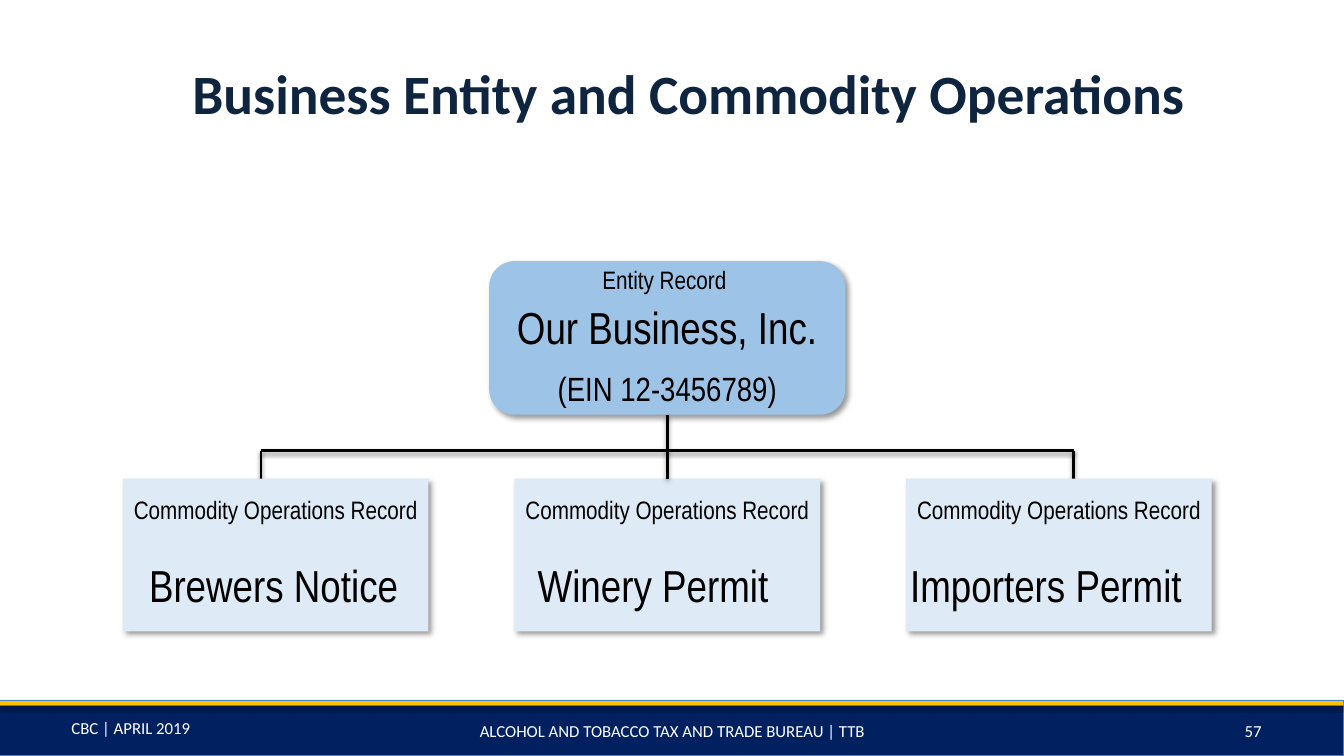
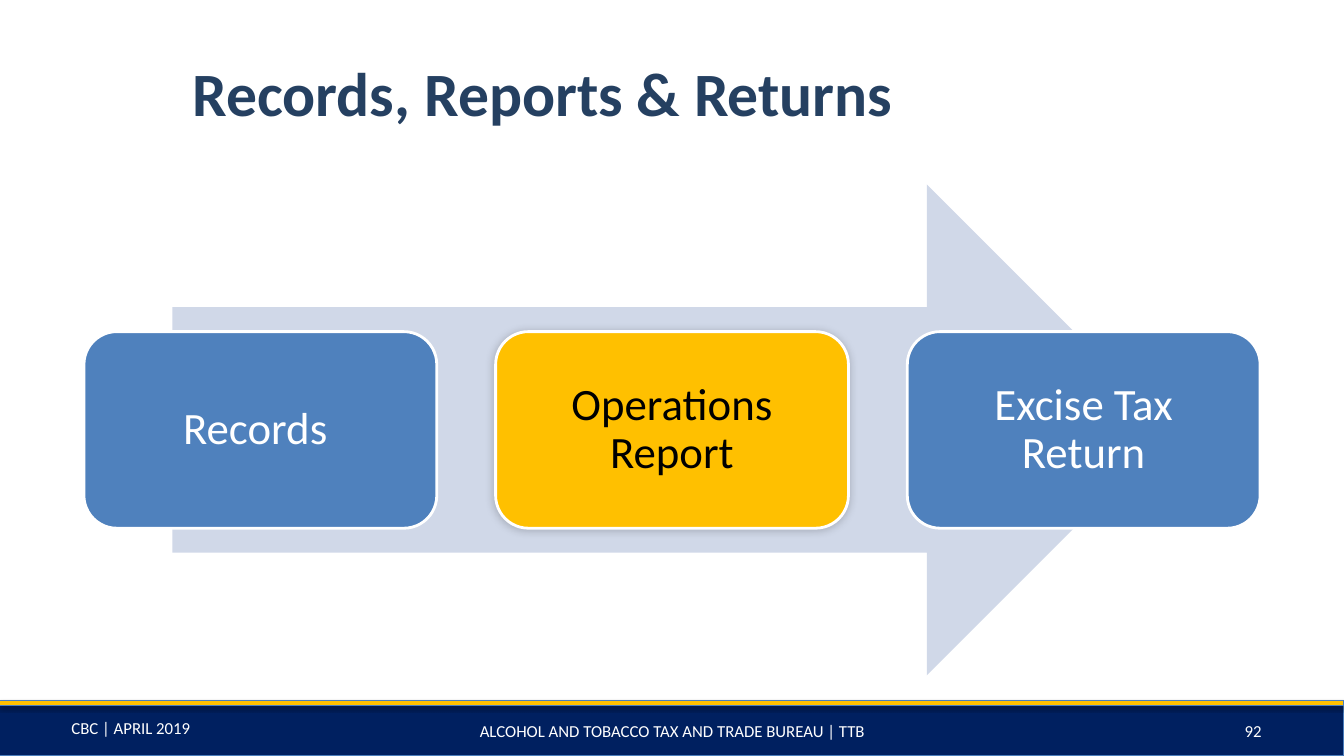
"""Build two slides on business records: an entity chart and a reporting process."""
from dataclasses import dataclass
from typing import Any, Optional

from lxml.etree import SubElement
from pptx import Presentation
from pptx.dml.color import RGBColor
from pptx.enum.shapes import MSO_CONNECTOR, MSO_SHAPE as SHAPE
from pptx.enum.text import MSO_ANCHOR as ANCHOR, PP_ALIGN as ALIGN
from pptx.oxml.ns import qn
from pptx.util import Inches, Pt

W, H = Inches(13.33), Inches(7.5)
NAVY, GOLD, EDGE = "002060", "FFC000", "4B7EBC"
WHITE, BLACK = "FFFFFF", "000000"
ENTITY_BLUE, CARD_BLUE = "9DC3E6", "DEEBF7"
STEP_BLUE, ARROW_BLUE = "4F81BD", "D0D8E8"
SANS, NARROW = "Calibri", "Arial Narrow"


@dataclass(frozen=True)
class Box:
    """Place and size in percent of the slide."""
    x: float
    y: float
    w: float
    h: float

    def emu(self) -> tuple[int, int, int, int]:
        return px(self.x), py(self.y), px(self.w), py(self.h)


@dataclass(frozen=True)
class Shadow:
    """Outer shadow: opacity in percent, blur and distance in points, angle."""
    alpha: int
    blur: float
    dist: float
    angle: int


@dataclass(frozen=True)
class Para:
    """One paragraph of one run, with an optional left indent in inches."""
    text: str
    size: float
    color: str = BLACK
    font: str = NARROW
    bold: bool = False
    align: Any = ALIGN.CENTER
    before: float = 0
    spacing: float = 1
    indent: float = 0


@dataclass(frozen=True)
class Permit:
    """Name of a commodity record and its left indent."""
    name: str
    indent: float


@dataclass(frozen=True)
class Step:
    """One stage of the reporting process."""
    text: str
    fill: str = STEP_BLUE
    color: str = WHITE
    shadow: Optional[Shadow] = None


BAND_SHADOW = Shadow(35, 3.1, 1.8, 90)
LINE_SHADOW = Shadow(38, 3.1, 1.6, 90)
CARD_SHADOW = Shadow(40, 4, 3, 45)
STEP_SHADOW = Shadow(20, 6, 1, 135)

TITLE = Box(13.58, 6.67, 81.47, 11.07)
BANDS = ((Box(0, 92.67, 100, 7.33), NAVY), (Box(0, 92.67, 100, 0.67), GOLD))
DATE = Box(0, 94.27, 19.2, 4)
AGENCY = Box(26.71, 94, 46.66, 5.33)
NUMBER = Box(86.57, 94, 13.35, 5.33)

CENTRE = 49.65
ENTITY = Box(CENTRE - 13.25, 34.53, 26.5, 20.33)
CARD_W, CARD_H, CARD_Y, CARD_PITCH = 22.74, 20.2, 63.33, 29.14
BUS_Y, BUS_HALF, DROP_END = 59.6, 30.23, 64
PERMITS = (Permit("Brewers Notice", 0.25), Permit("Winery Permit", 0.22),
           Permit("Importers Permit", 0.03))

ARROW = Box(12.83, 24.4, 74.4, 64.93)
STEP, STEP_PITCH = Box(6.25, 43.87, 26.25, 26), 30.63
STEPS = (Step("Records "), Step("Operations Report", GOLD, BLACK, STEP_SHADOW),
         Step("Excise Tax Return"))


def px(share: float) -> int:
    return round(W * share / 100)


def py(share: float) -> int:
    return round(H * share / 100)


def rgb(color: str) -> RGBColor:
    return RGBColor.from_string(color)


def set_shadow(sp: Any, shadow: Optional[Shadow]) -> None:
    effects = SubElement(sp._element.spPr, qn("a:effectLst"))
    if shadow:
        outer = SubElement(effects, qn("a:outerShdw"), blurRad=str(Pt(shadow.blur)),
                           dist=str(Pt(shadow.dist)), dir=str(shadow.angle * 60000),
                           algn="ctr", rotWithShape="0")
        clr = SubElement(outer, qn("a:srgbClr"), val=BLACK)
        SubElement(clr, qn("a:alpha"), val=str(shadow.alpha * 1000))


def write(sp: Any, paras: list[Para], inset: Optional[float] = None,
          anchor: Any = ANCHOR.MIDDLE) -> None:
    tf = sp.text_frame
    tf.word_wrap = True
    tf.vertical_anchor = anchor
    if inset is not None:
        tf.margin_left = tf.margin_right = tf.margin_top = tf.margin_bottom = Inches(inset)
    for i, para in enumerate(paras):
        p = tf.add_paragraph() if i else tf.paragraphs[0]
        p.alignment, p.line_spacing = para.align, para.spacing
        if para.before:
            p.space_before = Pt(para.before)
        if para.indent:
            p._p.get_or_add_pPr().set("marL", str(Inches(para.indent)))
        r = p.add_run()
        r.text = para.text
        r.font.name, r.font.size, r.font.bold = para.font, Pt(para.size), para.bold
        r.font.color.rgb = rgb(para.color)


def add_shape(s: Any, kind: Any, box: Box, fill: str, line: Optional[str] = None,
              width: float = 0.75, shadow: Optional[Shadow] = None) -> Any:
    sp = s.shapes.add_shape(kind, *box.emu())
    sp.fill.solid()
    sp.fill.fore_color.rgb = rgb(fill)
    if line:
        sp.line.color.rgb = rgb(line)
        sp.line.width = Pt(width)
    else:
        sp.line.fill.background()
    set_shadow(sp, shadow)
    return sp


def add_text(s: Any, box: Box, para: Para, anchor: Any = ANCHOR.MIDDLE) -> None:
    write(s.shapes.add_textbox(*box.emu()), [para], anchor=anchor)


def add_line(s: Any, x1: float, y1: float, x2: float, y2: float) -> None:
    cn = s.shapes.add_connector(MSO_CONNECTOR.STRAIGHT, px(x1), py(y1), px(x2), py(y2))
    cn.line.color.rgb = rgb(BLACK)
    cn.line.width = Pt(2)
    set_shadow(cn, LINE_SHADOW)


def add_slide(prs: Any, title: str, size: float, color: str, number: int) -> Any:
    s = prs.slides.add_slide(prs.slide_layouts[6])
    for box, fill in BANDS:
        add_shape(s, SHAPE.RECTANGLE, box, fill, EDGE, shadow=BAND_SHADOW)
    add_text(s, DATE, Para(" CBC | APRIL 2019", 12, WHITE, SANS), ANCHOR.TOP)
    add_text(s, AGENCY, Para("ALCOHOL AND TOBACCO TAX AND TRADE BUREAU | TTB", 12, WHITE, SANS))
    add_text(s, NUMBER, Para(str(number), 12, WHITE, SANS))
    add_text(s, TITLE, Para(title, size, color, SANS, True, ALIGN.LEFT))
    return s


def build_entity_chart(prs: Any) -> None:
    s = add_slide(prs, "Business Entity and Commodity Operations", 39.6, "0F243E", 57)
    left, right = CENTRE - BUS_HALF, CENTRE + BUS_HALF
    for x in (left, right):
        add_line(s, x, BUS_Y, x, DROP_END)
    sp = add_shape(s, SHAPE.ROUNDED_RECTANGLE, ENTITY, ENTITY_BLUE, shadow=CARD_SHADOW)
    write(sp, [Para("Entity Record ", 18, spacing=0.9),
               Para("Our Business, Inc.", 32, before=8, spacing=0.9),
               Para("(EIN 12-3456789)", 24, before=13, spacing=0.9)], 0.05)
    for i, permit in enumerate(PERMITS):
        x = CENTRE - CARD_W / 2 + (i - 1) * CARD_PITCH
        sp = add_shape(s, SHAPE.RECTANGLE, Box(x, CARD_Y, CARD_W, CARD_H), CARD_BLUE,
                       shadow=CARD_SHADOW)
        write(sp, [Para("Commodity Operations Record", 18, spacing=0.9),
                   Para(permit.name, 32, align=ALIGN.LEFT, before=28, spacing=0.9,
                        indent=permit.indent)], 0.01)
    add_line(s, CENTRE, ENTITY.y + ENTITY.h, CENTRE, CARD_Y)
    add_line(s, left, BUS_Y, right, BUS_Y)


def build_process(prs: Any) -> None:
    s = add_slide(prs, "Records, Reports & Returns", 44, "254061", 92)
    add_shape(s, SHAPE.RIGHT_ARROW, ARROW, ARROW_BLUE)
    for i, step in enumerate(STEPS):
        box = Box(STEP.x + i * STEP_PITCH, STEP.y, STEP.w, STEP.h)
        sp = add_shape(s, SHAPE.ROUNDED_RECTANGLE, box, step.fill, WHITE, 2, step.shadow)
        write(sp, [Para(step.text, 32, step.color, SANS, spacing=0.9)], 0.15)


def main() -> None:
    prs = Presentation()
    prs.slide_width, prs.slide_height = W, H
    build_entity_chart(prs)
    build_process(prs)
    prs.save("out.pptx")


if __name__ == "__main__":
    main()
